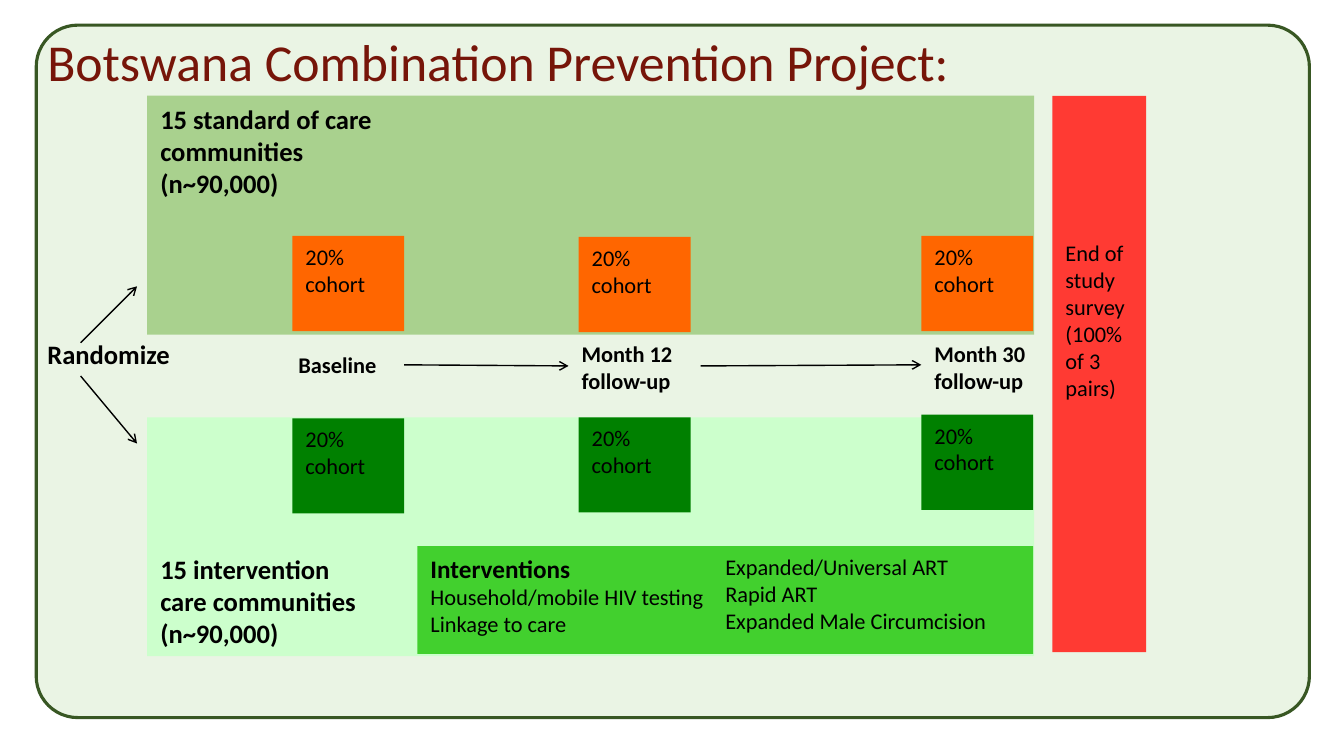
"""Build the study design slide of the Botswana Combination Prevention Project."""
from dataclasses import dataclass
from typing import Optional

from lxml.etree import SubElement
from pptx import Presentation
from pptx.dml.color import RGBColor
from pptx.enum.shapes import MSO_CONNECTOR, MSO_SHAPE
from pptx.enum.text import MSO_ANCHOR, MSO_AUTO_SIZE, PP_ALIGN
from pptx.oxml.ns import qn
from pptx.shapes.autoshape import Shape
from pptx.slide import Slide
from pptx.util import Pt

BLACK = RGBColor(0x00, 0x00, 0x00)
MAROON = RGBColor(0x76, 0x15, 0x09)
FRAME_FILL = RGBColor(0xE2, 0xF0, 0xD9)
FRAME_LINE = RGBColor(0x38, 0x57, 0x23)
STANDARD_GREEN = RGBColor(0xA9, 0xD1, 0x8E)
INTERVENTION_GREEN = RGBColor(0xCC, 0xFF, 0xCC)
ORANGE = RGBColor(0xFF, 0x66, 0x00)
DARK_GREEN = RGBColor(0x00, 0x80, 0x00)
BRIGHT_GREEN = RGBColor(0x42, 0xD0, 0x2E)
RED = RGBColor(0xFF, 0x3A, 0x33)

FONT = "Calibri"
SIDE_INSET = 9.4
TOP_INSET = 5
COHORT_WIDTH, COHORT_HEIGHT = 80, 68
VISIT_LEFTS = (208.8, 413.3, 658.1)
STANDARD_TOPS = (168.5, 169.2, 168.5)
INTERVENTION_TOPS = (298.8, 298.1, 296.2)


@dataclass(frozen=True)
class Block:
    """A rectangle or text box with paragraphs in one style."""

    left: float
    top: float
    width: float
    height: float
    lines: tuple[str, ...] = ()
    size: float = 16
    bold: bool = False
    fill: Optional[RGBColor] = None
    color: RGBColor = BLACK
    anchor: MSO_ANCHOR = MSO_ANCHOR.TOP
    side_inset: float = SIDE_INSET
    top_inset: float = TOP_INSET
    spacing: float = 1.0


@dataclass(frozen=True)
class Arrow:
    """A straight arrow between two points."""

    start_x: float
    start_y: float
    end_x: float
    end_y: float


def cohort(left: float, top: float, fill: RGBColor) -> Block:
    """Describe one cohort square."""
    return Block(left, top, COHORT_WIDTH, COHORT_HEIGHT, ("20% cohort",), fill=fill)


PANELS = (
    Block(105.1, 68.4, 633.6, 170.6, ("15 standard of care", "communities", "(n~90,000)"),
          19, True, STANDARD_GREEN),
    Block(105.1, 298.1, 633.6, 170.6, ("15 intervention", "care communities", "(n~90,000)"),
          19, True, INTERVENTION_GREEN, anchor=MSO_ANCHOR.BOTTOM),
    Block(298.1, 390.2, 440, 77, fill=BRIGHT_GREEN),
    Block(751.7, 68.4, 67, 397.4, ("End of study survey", "(100% of 3 pairs)"),
          fill=RED, top_inset=102.7),
)
COHORTS = tuple(
    cohort(left, top, fill)
    for tops, fill in ((STANDARD_TOPS, ORANGE), (INTERVENTION_TOPS, DARK_GREEN))
    for left, top in zip(VISIT_LEFTS, tops)
)
LABELS = (
    Block(30.2, 23, 894.2, 75.6, ("Botswana Combination Prevention Project:",), 37,
          color=MAROON, side_inset=3.6, top_inset=3.6, spacing=0.9),
    Block(24.5, 236.2, 113, 32.4, ("Randomize",), 19, True),
    Block(203.8, 246.2, 93.6, 28.8, ("Baseline",), bold=True),
    Block(406.1, 238.3, 93.6, 48.2, ("Month 12 follow-up",), bold=True),
    Block(658.1, 238.3, 93.6, 48.2, ("Month 30 follow-up",), bold=True),
)
INTERVENTIONS = Block(298.1, 390.2, 440, 70.6, (
    "Interventions", "Household/mobile HIV testing", "Linkage to care",
    "Expanded/Universal ART", "Rapid ART", "Expanded Male Circumcision"))
ARROWS = (
    Arrow(57.6, 244.8, 97.9, 204.5),
    Arrow(57.6, 268.6, 97.9, 316.8),
    Arrow(288.7, 260.6, 406.1, 261.4),
    Arrow(500.4, 261.4, 658.1, 260.6),
)


def draw_frame(page: Slide) -> None:
    """Draw the translucent rounded frame."""
    frame = page.shapes.add_shape(
        MSO_SHAPE.ROUNDED_RECTANGLE, Pt(25.9), Pt(18), Pt(909.4), Pt(494.6))
    frame.adjustments[0] = 0.06
    frame.shadow.inherit = False
    frame.fill.solid()
    frame.fill.fore_color.rgb = FRAME_FILL
    color = frame.element.spPr.find(qn("a:solidFill")).find(qn("a:srgbClr"))
    SubElement(color, qn("a:alpha"), val="70000")
    frame.line.color.rgb = FRAME_LINE
    frame.line.width = Pt(2.25)


def draw_block(page: Slide, block: Block) -> Shape:
    """Draw a filled rectangle or a plain text box."""
    bounds = [Pt(value) for value in (block.left, block.top, block.width, block.height)]
    if block.fill is None:
        box = page.shapes.add_textbox(*bounds)
    else:
        box = page.shapes.add_shape(MSO_SHAPE.RECTANGLE, *bounds)
        box.shadow.inherit = False
        box.fill.solid()
        box.fill.fore_color.rgb = block.fill
        box.line.fill.background()
    frame = box.text_frame
    frame.word_wrap = True
    frame.vertical_anchor = block.anchor
    frame.margin_left = frame.margin_right = Pt(block.side_inset)
    frame.margin_top, frame.margin_bottom = Pt(block.top_inset), Pt(TOP_INSET)
    for index, line in enumerate(block.lines):
        para = frame.add_paragraph() if index else frame.paragraphs[0]
        para.text = line
        para.alignment = PP_ALIGN.LEFT
        para.line_spacing = block.spacing
        para.font.name = FONT
        para.font.size = Pt(block.size)
        para.font.bold = block.bold
        para.font.color.rgb = block.color
    return box


def draw_interventions(page: Slide) -> None:
    """Draw the intervention list in two columns under a bold heading."""
    box = draw_block(page, INTERVENTIONS)
    box.text_frame.auto_size = MSO_AUTO_SIZE.SHAPE_TO_FIT_TEXT
    box.element.txBody.find(qn("a:bodyPr")).set("numCol", "2")
    heading = box.text_frame.paragraphs[0]
    heading.font.size = Pt(18)
    heading.font.bold = True


def draw_arrow(page: Slide, arrow: Arrow) -> None:
    """Draw a thin black line with an open arrowhead."""
    connector = page.shapes.add_connector(
        MSO_CONNECTOR.STRAIGHT, Pt(arrow.start_x), Pt(arrow.start_y),
        Pt(arrow.end_x), Pt(arrow.end_y))
    connector.line.color.rgb = BLACK
    connector.line.width = Pt(1)
    properties = connector.element.spPr
    SubElement(properties.find(qn("a:ln")), qn("a:tailEnd"), type="arrow")
    SubElement(properties, qn("a:effectLst"))


def main() -> None:
    """Create and save the deck."""
    deck = Presentation()
    deck.slide_width, deck.slide_height = Pt(960), Pt(540)
    page = deck.slides.add_slide(deck.slide_layouts[6])
    draw_frame(page)
    for block in PANELS + COHORTS + LABELS:
        draw_block(page, block)
    draw_interventions(page)
    for arrow in ARROWS:
        draw_arrow(page, arrow)
    deck.save("out.pptx")


if __name__ == "__main__":
    main()
